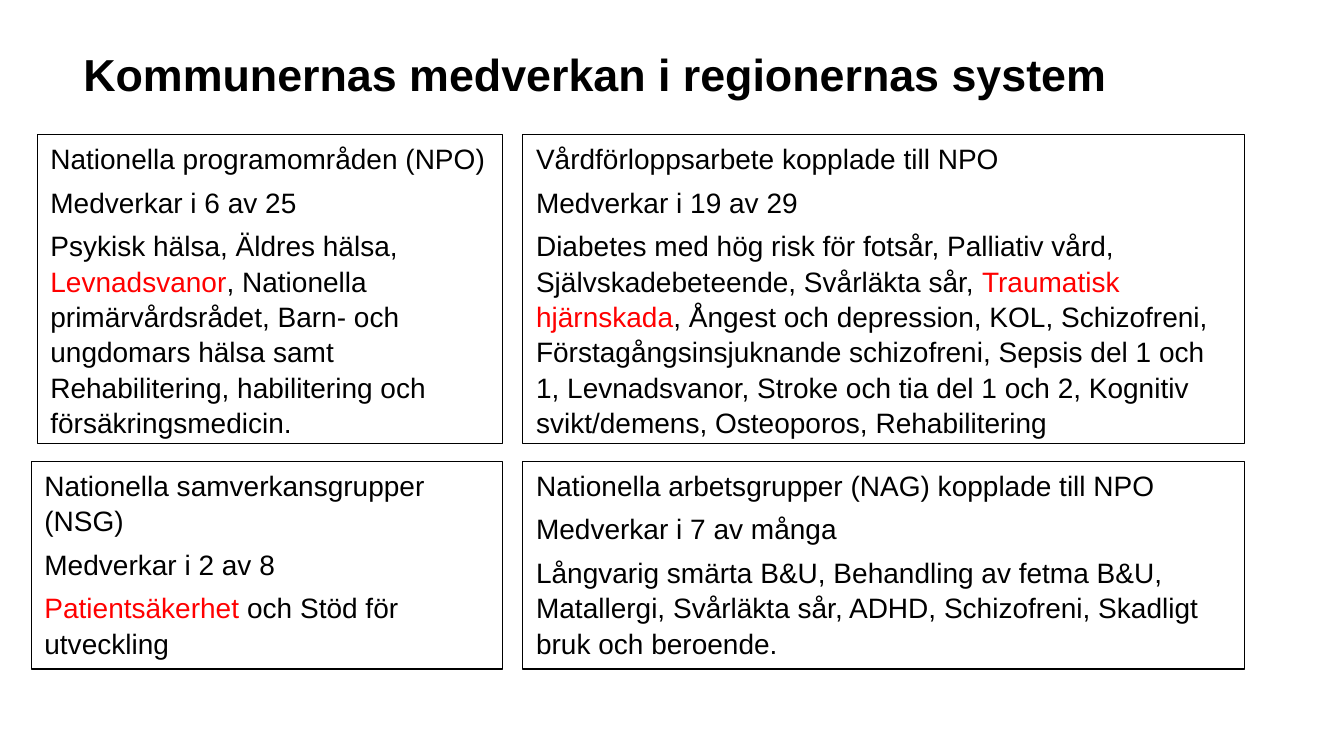
"""Build the slide on how municipalities take part in the regions' system."""
from dataclasses import dataclass

from pptx import Presentation
from pptx.dml.color import RGBColor as RGB
from pptx.enum.shapes import MSO_SHAPE as Shape
from pptx.enum.text import MSO_ANCHOR as Anchor, PP_ALIGN as Align
from pptx.util import Cm, Pt

BLACK = "000000"
RED = "FF0000"
TOP_ROW = (3.4, 7.77)
BOTTOM_ROW = (11.63, 5.23)
LEFT_EDGE = 12.67
RIGHT_COLUMN = (13.18, 18.19)


@dataclass
class Panel:
    column: tuple[float, float]
    row: tuple[float, float]
    heading: str
    share: str
    areas: list[tuple[str, str]]


def left_column(x: float) -> tuple[float, float]:
    return x, LEFT_EDGE - x


PANELS = [
    Panel(left_column(0.94), TOP_ROW, "Nationella programområden (NPO)", "Medverkar i 6 av 25", [
        ("Psykisk hälsa, Äldres hälsa, ", BLACK),
        ("Levnadsvanor", RED),
        (", Nationella primärvårdsrådet, Barn- och ungdomars hälsa samt "
         "Rehabilitering, habilitering och försäkringsmedicin.", BLACK),
    ]),
    Panel(left_column(0.79), BOTTOM_ROW, "Nationella samverkansgrupper (NSG)", "Medverkar i 2 av 8", [
        ("Patientsäkerhet ", RED),
        ("och Stöd för utveckling", BLACK),
    ]),
    Panel(RIGHT_COLUMN, BOTTOM_ROW, "Nationella arbetsgrupper (NAG) kopplade till NPO",
          "Medverkar i 7 av många", [
        ("Långvarig smärta B&U, Behandling av fetma B&U, Matallergi, Svårläkta sår, "
         "ADHD, Schizofreni, Skadligt bruk och beroende.", BLACK),
    ]),
    Panel(RIGHT_COLUMN, TOP_ROW, "Vårdförloppsarbete kopplade till NPO", "Medverkar i 19 av 29", [
        ("Diabetes med hög risk för fotsår, Palliativ vård, Självskadebeteende, Svårläkta sår, ", BLACK),
        ("Traumatisk hjärnskada", RED),
        (", Ångest och depression, KOL, Schizofreni, Förstagångsinsjuknande schizofreni, "
         "Sepsis del 1 och 1, Levnadsvanor, Stroke och tia del 1 och 2, "
         "Kognitiv svikt/demens, Osteoporos, Rehabilitering", BLACK),
    ]),
]


def color(value: str) -> RGB:
    return RGB.from_string(value)


def add_text(p, text: str, *, size: float = 20, fill: str = BLACK, bold: bool = False) -> None:
    r = p.add_run()
    r.text = text
    r.font.name = "Arial"
    r.font.size = Pt(size)
    r.font.bold = bold
    r.font.color.rgb = color(fill)


def add_title(s, text: str) -> None:
    sp = s.shapes.add_textbox(Cm(1.85), Cm(1.17), Cm(30.63), Cm(1.5))
    tf = sp.text_frame
    tf.word_wrap = True
    tf.vertical_anchor = Anchor.MIDDLE
    p = tf.paragraphs[0]
    p.line_spacing = 0.95
    add_text(p, text, size=32, bold=True)


def add_panel(s, panel: Panel) -> None:
    (x, w), (y, h) = panel.column, panel.row
    sp = s.shapes.add_shape(Shape.RECTANGLE, Cm(x), Cm(y), Cm(w), Cm(h))
    sp.shadow.inherit = False
    sp.fill.background()
    sp.line.color.rgb = color(BLACK)
    sp.line.width = Pt(0.75)
    tf = sp.text_frame
    tf.word_wrap = True
    tf.vertical_anchor = Anchor.TOP
    tf.margin_left = Cm(0.33)
    for i, runs in enumerate([[(panel.heading, BLACK)], [(panel.share, BLACK)], panel.areas]):
        p = tf.add_paragraph() if i else tf.paragraphs[0]
        p.alignment = Align.LEFT
        p.line_spacing = 1.05
        p.space_after = Pt(6)
        for text, fill in runs:
            add_text(p, text, fill=fill)


def main() -> None:
    prs = Presentation()
    prs.slide_width, prs.slide_height = Cm(33.87), Cm(19.05)
    s = prs.slides.add_slide(prs.slide_layouts[6])
    add_title(s, "Kommunernas medverkan i regionernas system")
    for panel in PANELS:
        add_panel(s, panel)
    prs.save("out.pptx")


if __name__ == "__main__":
    main()
